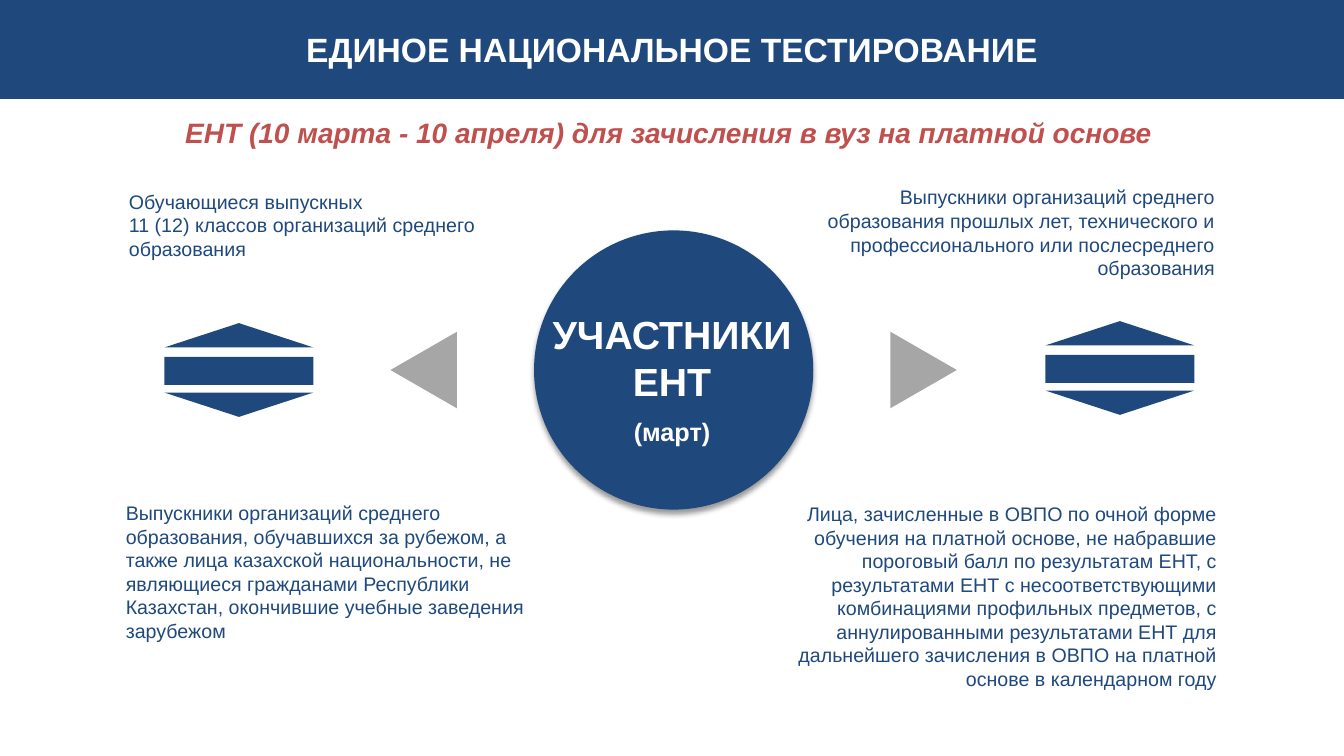
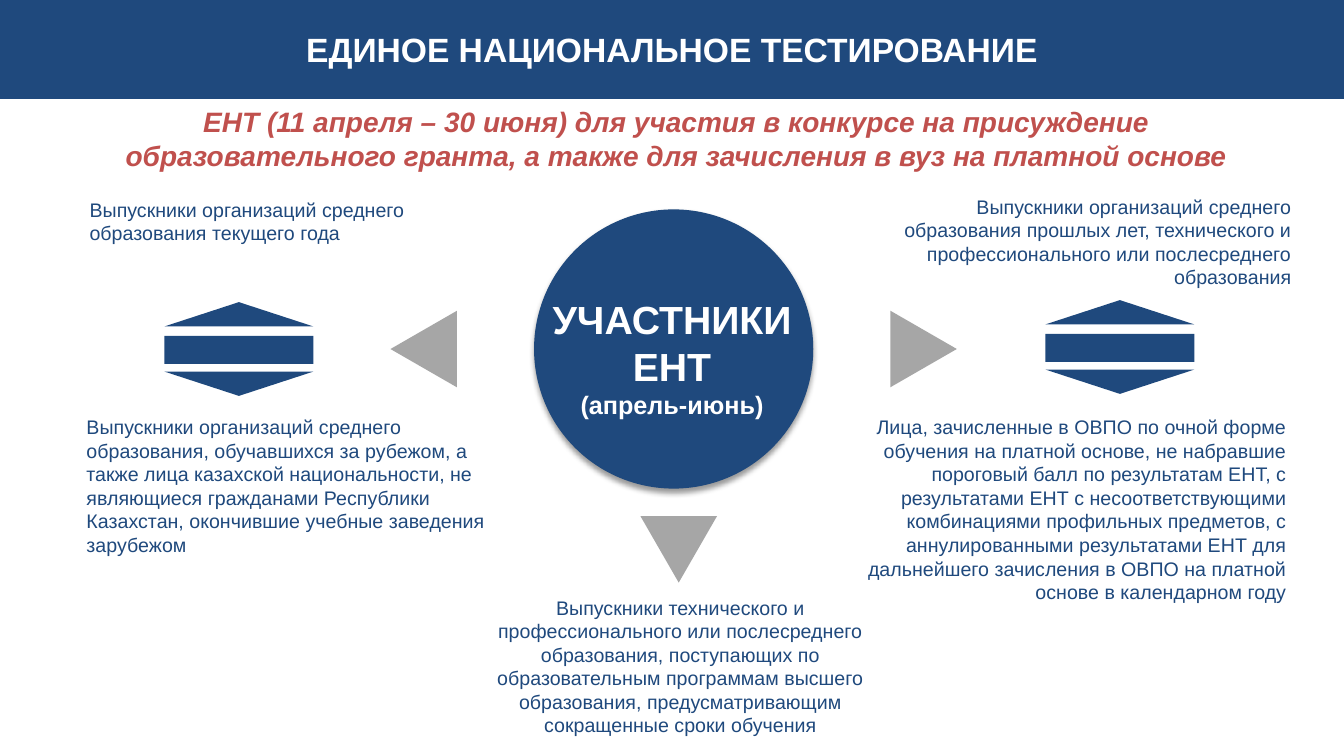
import dataclasses

import lxml.etree
import pptx
import pptx.dml.color
import pptx.enum.shapes
import pptx.enum.text
import pptx.oxml.ns
import pptx.util

SHAPE = pptx.enum.shapes.MSO_SHAPE
ALIGN = pptx.enum.text.PP_ALIGN
ANCHOR = pptx.enum.text.MSO_ANCHOR


@dataclasses.dataclass(frozen=True)
class Theme:
    font: str = "Arial"
    navy: str = "1F497D"
    red: str = "C0504D"
    gray: str = "A6A6A6"
    white: str = "FFFFFF"
    title: int = 24
    subtitle: int = 20
    hub: int = 28
    period: int = 18
    body: int = 14


T = Theme()

# Square grid: 160 columns by 90 rows
COLS, ROWS = 160, 90
WIDTH, HEIGHT = pptx.util.Inches(40 / 3), pptx.util.Inches(7.5)
BAND_H = 11.64
HUB_X, HUB_D = 80.2, 33.24
ARROW_W, ARROW_H, ARROW_GAP = 9.12, 7.92, 29.75
EMBLEM_W, EMBLEM_H = 17.76, 11.16
EMBLEM_LEFT, EMBLEM_RIGHT, EMBLEM_LIFT = 28.44, 133.32, 0.24


@dataclasses.dataclass(frozen=True)
class Group:
    """A group of participants: wording, text box size and alignment."""
    text: str
    w: float
    h: float
    align: object = ALIGN.LEFT


PUPILS = Group("Обучающиеся выпускных\n11 (12) классов организаций среднего образования", 46.92, 9.72)
GRADUATES = Group("Выпускники организаций среднего образования текущего года", 46.92, 6.84)
ABROAD = Group(
    "Выпускники организаций среднего образования, обучавшихся за рубежом, а также лица "
    "казахской национальности, не являющиеся гражданами Республики Казахстан, окончившие "
    "учебные заведения зарубежом", 51.96, 18.12)
PAST_YEARS = Group(
    "Выпускники организаций среднего образования прошлых лет, технического и "
    "профессионального или послесреднего образования", 53.52, 12.48, ALIGN.RIGHT)
ENROLLED = Group(
    "Лица, зачисленные в ОВПО по очной форме обучения на платной основе, не набравшие "
    "пороговый балл по результатам ЕНТ, с результатами ЕНТ с несоответствующими "
    "комбинациями профильных предметов, с аннулированными результатами ЕНТ для "
    "дальнейшего зачисления в ОВПО на платной основе в календарном году",
    56.64, 23.88, ALIGN.RIGHT)
COLLEGE = Group(
    "Выпускники технического и профессионального или послесреднего образования, "
    "поступающих по образовательным программам высшего образования, предусматривающим "
    "сокращенные сроки обучения", 53.52, 18.12, ALIGN.CENTER)


def place(x, y, w, h):
    """Turn grid columns and rows into slide lengths."""
    return (round(WIDTH * x / COLS), round(HEIGHT * y / ROWS),
            round(WIDTH * w / COLS), round(HEIGHT * h / ROWS))


def rgb(value):
    return pptx.dml.color.RGBColor.from_string(value)


def add_figure(s, kind, box, color, rotation=0):
    sp = s.shapes.add_shape(kind, *place(*box))
    sp.shadow.inherit = False
    sp.fill.solid()
    sp.fill.fore_color.rgb = rgb(color)
    sp.line.fill.background()
    sp.rotation = rotation
    return sp


def write(tf, text, size, color, align=ALIGN.LEFT, bold=False, italic=False, before=0, more=False):
    """Write one paragraph per line; more=True continues after existing text."""
    for i, line in enumerate(text.split("\n")):
        p = tf.add_paragraph() if more or i else tf.paragraphs[0]
        p.alignment = align
        p.space_before = pptx.util.Pt(before)
        r = p.add_run()
        r.text = line
        f = r.font
        f.name, f.size, f.bold, f.italic = T.font, pptx.util.Pt(size), bold, italic
        f.color.rgb = rgb(color)


def add_text(s, box, anchor=ANCHOR.TOP):
    tf = s.shapes.add_textbox(*place(*box)).text_frame
    tf.word_wrap = True
    tf.auto_size = pptx.enum.text.MSO_AUTO_SIZE.SHAPE_TO_FIT_TEXT
    tf.vertical_anchor = anchor
    return tf


def add_soft_shadow(sp):
    qn = pptx.oxml.ns.qn
    effects = sp._element.spPr.find(qn("a:effectLst"))
    shadow = lxml.etree.SubElement(
        effects, qn("a:outerShdw"), blurRad=str(pptx.util.Pt(4)), dist=str(pptx.util.Pt(3)),
        dir="5400000", rotWithShape="0")
    color = lxml.etree.SubElement(shadow, qn("a:srgbClr"), val="000000")
    lxml.etree.SubElement(color, qn("a:alpha"), val="40000")


def add_header(s, subtitle, box):
    # Title band
    sp = add_figure(s, SHAPE.RECTANGLE, (0, 0, COLS, BAND_H), T.navy)
    sp.line.color.rgb = rgb(T.navy)
    sp.line.width = pptx.util.Pt(2)
    sp.text_frame.word_wrap = True
    sp.text_frame.vertical_anchor = ANCHOR.MIDDLE
    write(sp.text_frame, "ЕДИНОЕ НАЦИОНАЛЬНОЕ ТЕСТИРОВАНИЕ", T.title, T.white, ALIGN.CENTER, bold=True)
    # Subtitle
    write(add_text(s, box), subtitle, T.subtitle, T.red, ALIGN.CENTER, bold=True, italic=True)


def add_hub(s, x, y, period, before):
    """Circle with its label, centred on x, y."""
    left, top = x - HUB_D / 2, y - HUB_D / 2
    add_soft_shadow(add_figure(s, SHAPE.OVAL, (left, top, HUB_D, HUB_D), T.navy))
    w, h = 32.16, 16.2
    tf = add_text(s, (x - w / 2 - 0.2, y - h / 2 + 1, w, h), ANCHOR.MIDDLE)
    write(tf, "УЧАСТНИКИ ЕНТ", T.hub, T.white, ALIGN.CENTER, bold=True)
    write(tf, period, T.period, T.white, ALIGN.CENTER, bold=True, before=before, more=True)


def add_arrow(s, x, y, rotation):
    box = (x - ARROW_W / 2, y - ARROW_H / 2, ARROW_W, ARROW_H)
    add_figure(s, SHAPE.ISOSCELES_TRIANGLE, box, T.gray, rotation)


def add_emblem(s, x, y):
    """Bar between two triangles, centred on x, y."""
    left, top = x - EMBLEM_W / 2, y - EMBLEM_H / 2
    for kind, start, share, rotation in (
            (SHAPE.RECTANGLE, 0.36, 0.3, 0),
            (SHAPE.ISOSCELES_TRIANGLE, 0, 0.26, 0),
            (SHAPE.ISOSCELES_TRIANGLE, 0.74, 0.26, 180)):
        box = (left, top + start * EMBLEM_H, EMBLEM_W, share * EMBLEM_H)
        add_figure(s, kind, box, T.navy, rotation)


def add_participants_slide(prs, subtitle, subtitle_box, axis, period, groups, before=0, down_arrow=False):
    s = prs.slides.add_slide(prs.slide_layouts[6])
    add_header(s, subtitle, subtitle_box)
    add_hub(s, HUB_X, axis, period, before)
    # Arrows and emblems on the horizontal axis
    add_arrow(s, HUB_X - ARROW_GAP, axis, 270)
    add_arrow(s, HUB_X + ARROW_GAP, axis, 90)
    if down_arrow:
        add_arrow(s, HUB_X + 0.6, axis + 23.85, 180)
    add_emblem(s, EMBLEM_LEFT, axis)
    add_emblem(s, EMBLEM_RIGHT, axis - EMBLEM_LIFT)
    # Participant groups
    for group, x, y in groups:
        tf = add_text(s, (x, y, group.w, group.h))
        write(tf, group.text, T.body, T.navy, group.align)


def main():
    prs = pptx.Presentation()
    prs.slide_width, prs.slide_height = WIDTH, HEIGHT
    add_participants_slide(
        prs, "ЕНТ (10 марта - 10 апреля) для зачисления в вуз на платной основе",
        (16.32, 13.2, 126.6, 5.28), 44.05, "(март)",
        [(PUPILS, 14.16, 21.96), (ABROAD, 13.8, 59.04),
         (PAST_YEARS, 92.28, 21.48), (ENROLLED, 89.4, 59.16)], before=9)
    add_participants_slide(
        prs, "ЕНТ (11 апреля – 30 июня) для участия в конкурсе на присуждение "
        "образовательного гранта, а также для зачисления в вуз на платной основе",
        (12, 11.88, 137.04, 9.24), 41.55, "(апрель-июнь)",
        [(GRADUATES, 9.48, 22.92), (ABROAD, 9.12, 48.84), (PAST_YEARS, 101.4, 22.56),
         (ENROLLED, 97.68, 48.84), (COLLEGE, 54.24, 70.32)], down_arrow=True)
    prs.save("out.pptx")


if __name__ == "__main__":
    main()
